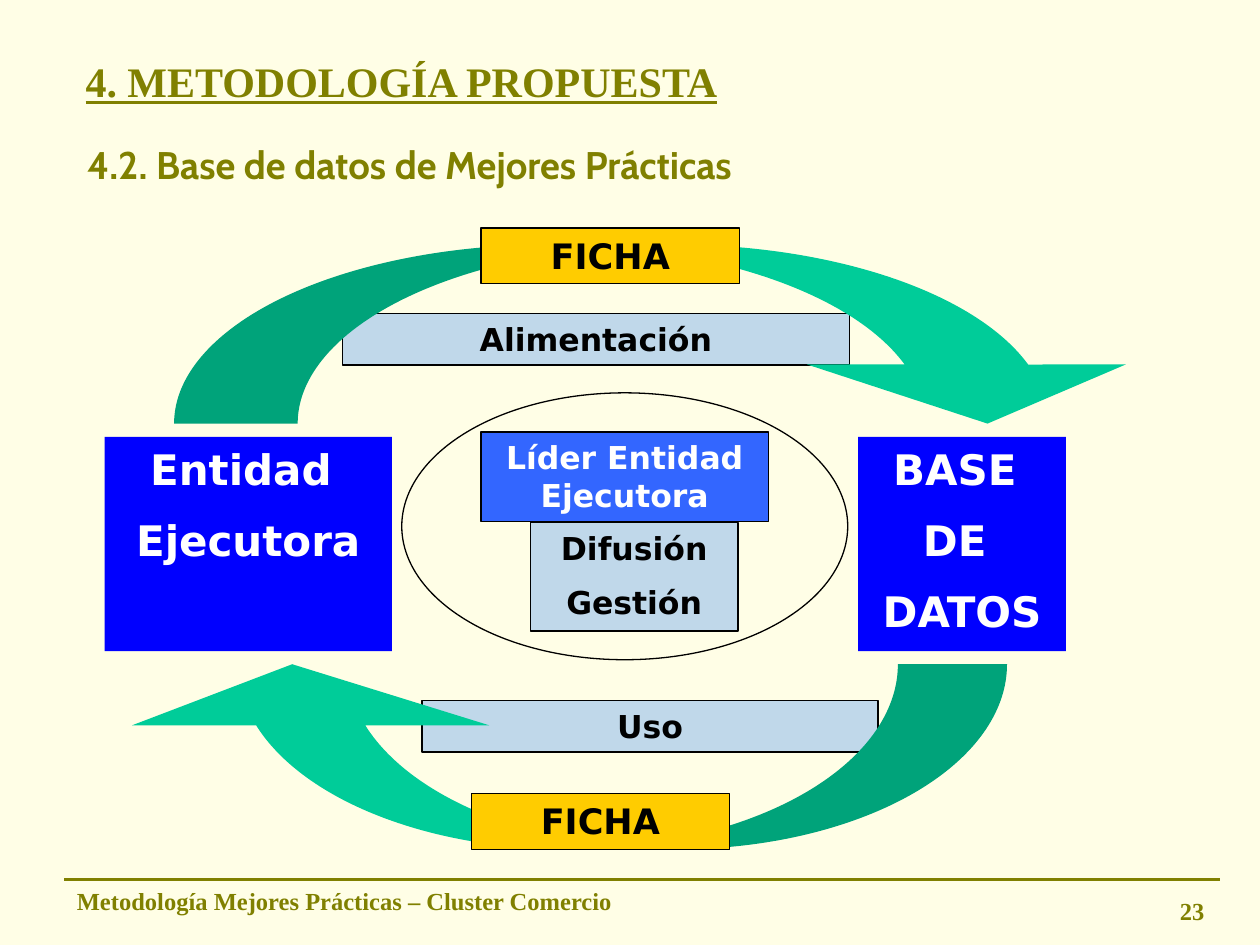
from pptx import Presentation
from pptx import util as u
from pptx.dml.color import RGBColor
from pptx.enum import shapes, text
from pptx.oxml import ns
from lxml import etree

CREAM = RGBColor(0xFF, 0xFE, 0xE6)
OLIVE = RGBColor(0x80, 0x80, 0x00)
BLUE = RGBColor(0x00, 0x00, 0xFF)
MID_BLUE = RGBColor(0x33, 0x66, 0xFF)
PALE_BLUE = RGBColor(0xC0, 0xD8, 0xEA)
GREEN = RGBColor(0x00, 0xCC, 0x99)
YELLOW = RGBColor(0xFF, 0xCC, 0x00)
BLACK = RGBColor(0x00, 0x00, 0x00)
WHITE = RGBColor(0xFF, 0xFF, 0xFF)
SERIF = "Times New Roman"
SANS = "DejaVu Sans"
LEFT, CENTER, RIGHT = text.PP_ALIGN.LEFT, text.PP_ALIGN.CENTER, text.PP_ALIGN.RIGHT
TOP, MIDDLE = text.MSO_ANCHOR.TOP, text.MSO_ANCHOR.MIDDLE


def write(box, words, size=18, font=SANS, color=BLACK, bold=True,
          underline=False, align=CENTER, anchor=TOP, gap=0):
    """Fill a box with one formatted paragraph per line of words."""
    frame = box.text_frame
    frame.word_wrap = True
    frame.auto_size = text.MSO_AUTO_SIZE.NONE
    frame.vertical_anchor = anchor
    for index, line in enumerate(words.split("\n")):
        para = frame.add_paragraph() if index else frame.paragraphs[0]
        para.alignment = align
        para.space_before = u.Pt(gap if index else 0)
        span = para.add_run()
        span.text = line
        span.font.size = u.Pt(size)
        span.font.name = font
        span.font.bold = bold
        span.font.underline = underline
        span.font.color.rgb = color


class Painter:
    """Holds the style and the current page."""

    def __init__(self, page):
        self.page = page
        page.background.fill.solid()
        page.background.fill.fore_color.rgb = CREAM

    def place(self, box, area):
        box.left, box.top, box.width, box.height = map(u.Cm, area)

    def title(self, words, area):
        box = self.page.shapes.title
        self.place(box, area)
        write(box, words, size=24, font=SERIF, color=OLIVE, underline=True,
              align=LEFT, anchor=MIDDLE)

    def body(self, words, area):
        box = self.page.placeholders[1]
        self.place(box, area)
        write(box, words, size=22, font="Cabin", color=OLIVE, align=LEFT)
        for para in box.text_frame.paragraphs:
            props = para._p.get_or_add_pPr()
            props.set("marL", str(u.Cm(0.97)))
            props.set("indent", str(-u.Cm(0.97)))
            etree.SubElement(props, ns.qn("a:buNone"))

    def label(self, words, area, align=LEFT):
        box = self.page.shapes.add_textbox(*map(u.Cm, area))
        write(box, words, size=14, font=SERIF, color=OLIVE, align=align)

    def rule(self, *ends):
        line = self.page.shapes.add_connector(
            shapes.MSO_CONNECTOR.STRAIGHT, *map(u.Cm, ends))
        line.line.color.rgb = OLIVE
        line.line.width = u.Pt(2.25)
        etree.SubElement(line._element.spPr, ns.qn("a:effectLst"))

    def shape(self, kind, area, fill=None, outlined=False):
        box = self.page.shapes.add_shape(kind, *map(u.Cm, area))
        box.shadow.inherit = False
        if fill is None:
            box.fill.background()
        else:
            box.fill.solid()
            box.fill.fore_color.rgb = fill
        if outlined:
            box.line.color.rgb = BLACK
            box.line.width = u.Pt(0.75)
        else:
            box.line.fill.background()
        return box

    def block(self, words, area, fill=PALE_BLUE, outlined=True, size=18, color=BLACK):
        box = self.shape(shapes.MSO_SHAPE.RECTANGLE, area, fill, outlined)
        write(box, words, size=size, color=color, gap=size / 2)

    def ellipse(self, area):
        self.shape(shapes.MSO_SHAPE.OVAL, area, outlined=True)

    def curved_arrow(self, area, adjustments, rotation=0):
        arrow = self.shape(shapes.MSO_SHAPE.CURVED_DOWN_ARROW, area, GREEN)
        arrow.rotation = rotation
        for index, value in enumerate(adjustments):
            arrow.adjustments[index] = value


def main():
    deck = Presentation()
    deck.slide_width, deck.slide_height = u.Cm(25.4), u.Cm(19.05)
    painter = Painter(deck.slides.add_slide(deck.slide_layouts[1]))

    painter.rule(1.3, 17.73, 24.59, 17.73)
    painter.label("Metodología Mejores Prácticas – Cluster Comercio",
                  (1.3, 17.73, 12.19, 0.86))
    painter.label("23", (19.25, 17.93, 5.28, 0.91), align=RIGHT)
    painter.title("4. METODOLOGÍA PROPUESTA", (1.47, 0.53, 21.79, 2.21))
    painter.body("4.2. Base de datos de Mejores Prácticas", (1.5, 2.72, 21.59, 13.56))

    ends = {"fill": BLUE, "outlined": False, "size": 24, "color": WHITE}
    card = {"fill": YELLOW, "size": 20}
    painter.block("Entidad \nEjecutora", (2.11, 8.81, 5.79, 4.32), **ends)
    painter.block("Alimentación", (6.91, 6.32, 10.21, 1.04))
    painter.block("BASE \nDE \nDATOS", (17.3, 8.81, 4.19, 4.32), **ends)
    painter.block("Uso", (8.51, 14.12, 9.19, 1.04))
    painter.curved_arrow((2.29, 13.39, 18.01, 3.73), (0.59, 1.93, 0.33), rotation=180)
    painter.block("FICHA", (9.5, 16, 5.21, 1.12), **card)
    painter.block("Difusión\nGestión", (10.69, 10.54, 4.19, 2.18))
    painter.ellipse((8.1, 7.92, 8.99, 5.38))
    painter.block("Líder Entidad Ejecutora", (9.7, 8.71, 5.79, 1.8),
                  fill=MID_BLUE, color=WHITE)
    painter.curved_arrow((3.51, 4.93, 19.61, 3.61), (0.69, 1.78, 0.33))
    painter.block("FICHA", (9.7, 4.6, 5.21, 1.12), **card)

    deck.save("out.pptx")


if __name__ == "__main__":
    main()
